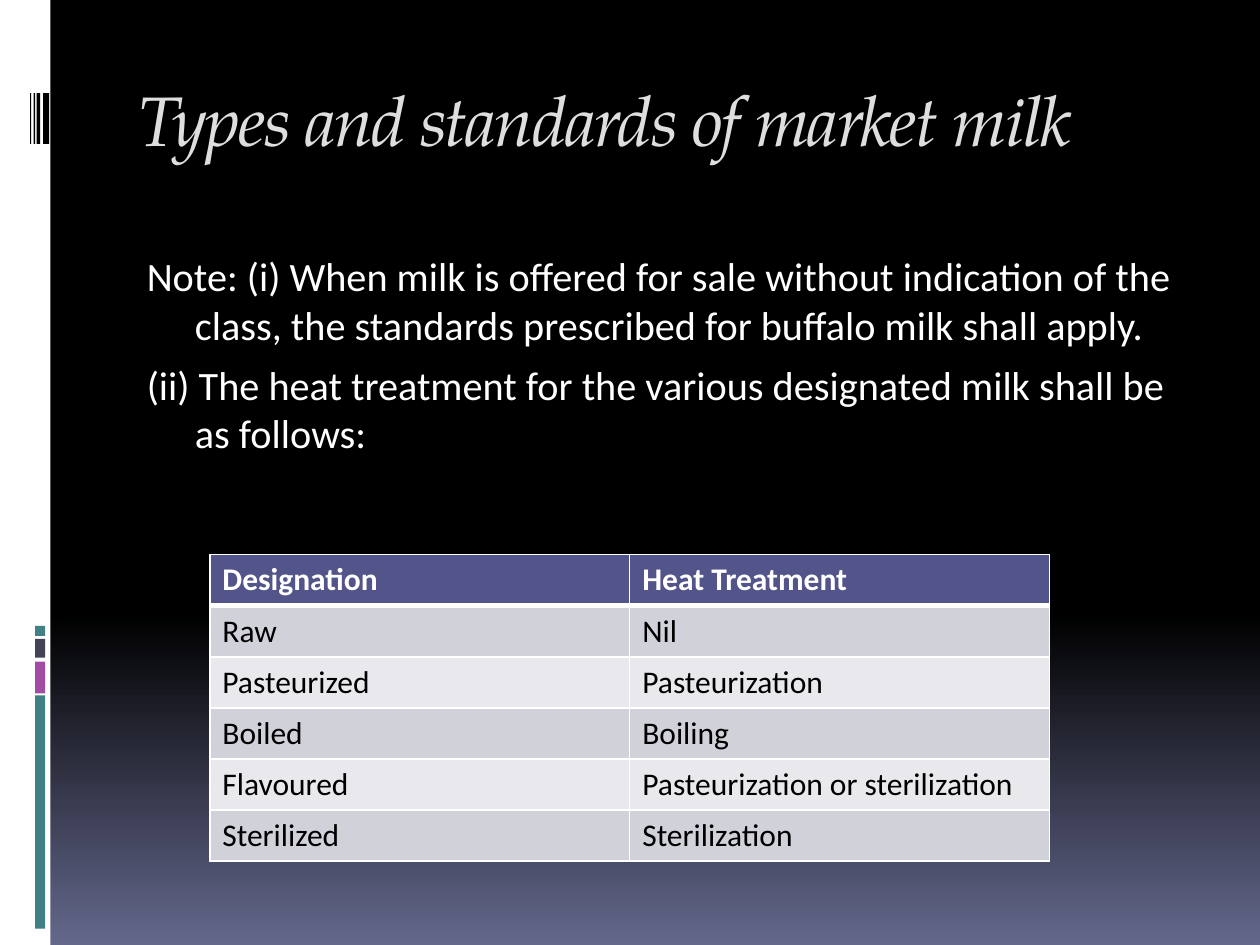
from dataclasses import dataclass

from lxml.etree import SubElement
from pptx import Presentation
from pptx.dml.color import RGBColor
from pptx.enum.shapes import MSO_SHAPE
from pptx.oxml.ns import qn
from pptx.util import Cm, Pt

COLORS = {
    "white": "FFFFFF", "black": "000000", "dusk": "64688B", "title": "DEDEDE",
    "teal": "438086", "purple": "A04DA3", "slate": "424456",
    "header": "53548A", "odd_row": "D1D1DA", "even_row": "E9E9ED",
}
BODY_FONT = "Calibri"
TITLE = "Types and standards of market milk"
NOTES = [
    "Note: (i) When milk is offered for sale without indication of the class, "
    "the standards prescribed for buffalo milk shall apply.",
    "(ii) The heat treatment for the various designated milk shall be as follows:",
]
TREATMENTS = [
    ("Designation", "Heat Treatment"),
    ("Raw", "Nil"),
    ("Pasteurized", "Pasteurization"),
    ("Boiled", "Boiling"),
    ("Flavoured", "Pasteurization or sterilization"),
    ("Sterilized", "Sterilization"),
]


@dataclass(frozen=True)
class Bar:
    """A plain rectangle, measured in centimetres."""
    left: float
    top: float
    width: float
    height: float
    color: str


SIDE_PANEL = Bar(0, 0, 1.02, 19.05, "white")
SEGMENTS = [
    Bar(0.71, top, 0.2, height, color)
    for top, height, color in [
        (14.02, 4.7, "teal"), (13.34, 0.64, "purple"),
        (12.88, 0.38, "slate"), (12.62, 0.2, "teal"),
    ]
]
STRIPES = [
    Bar(left, 1.88, width, 1.02, "black")
    for left, width in [(0.87, 0.12), (0.74, 0.07), (0.68, 0.03), (0.61, 0.02)]
]


def rgb(name: str) -> RGBColor:
    """Look up a palette colour."""
    return RGBColor.from_string(COLORS[name])


def set_font(font, name: str, size: float, color: str) -> None:
    """Set the face, size and colour of a font."""
    font.name, font.size = name, Pt(size)
    font.color.rgb = rgb(color)


def paint_background(s) -> None:
    """Fade the slide from black to dusk at the bottom."""
    fill = s.background.fill
    fill.gradient()
    fill.gradient_angle = 270
    for stop, position, color in zip(fill.gradient_stops, (0.65, 1), ("black", "dusk")):
        stop.position = position
        stop.color.rgb = rgb(color)


def add_bar(s, bar: Bar) -> None:
    """Draw one borderless rectangle."""
    sp = s.shapes.add_shape(MSO_SHAPE.RECTANGLE, Cm(bar.left), Cm(bar.top),
                            Cm(bar.width), Cm(bar.height))
    sp.shadow.inherit = False
    sp.fill.solid()
    sp.fill.fore_color.rgb = rgb(bar.color)
    sp.line.fill.background()


def add_frame(s, top: float, height: float):
    """Add a wrapping text box in the main column."""
    tf = s.shapes.add_textbox(Cm(2.54), Cm(top), Cm(21.59), Cm(height)).text_frame
    tf.word_wrap = True
    return tf


def add_title(s) -> None:
    """Write the italic heading with tightened letters."""
    p = add_frame(s, 1.42, 2.54).paragraphs[0]
    r = p.add_run()
    r.text = TITLE
    set_font(p.font, "TeX Gyre Pagella", 40, "title")
    p.font.italic = True
    r.font._element.set("spc", "-100")


def add_notes(s) -> None:
    """Write the notes with hanging indents."""
    tf = add_frame(s, 4.95, 12.7)
    for i, note in enumerate(NOTES):
        p = tf.add_paragraph() if i else tf.paragraphs[0]
        p.text = note
        if i:
            p.space_before = Pt(7)
        pPr = p._p.get_or_add_pPr()
        pPr.set("marL", str(Cm(1.14)))
        pPr.set("indent", str(Cm(-0.97)))
        set_font(p.font, BODY_FONT, 23, "white")


def add_border(cell, side: str, width: float) -> None:
    """Give one side of a cell a white line."""
    ln = SubElement(cell._tc.get_or_add_tcPr(), qn(f"a:ln{side}"), w=str(Pt(width)))
    fill = SubElement(ln, qn("a:solidFill"))
    SubElement(fill, qn("a:srgbClr"), val=COLORS["white"])


def style_cell(cell, row: int) -> None:
    """Apply borders, fill and font according to the row."""
    header = row == 0
    for side in "LRTB" if header else "LRB":
        add_border(cell, side, 3 if header and side == "B" else 1)
    cell.fill.solid()
    cell.fill.fore_color.rgb = rgb(
        "header" if header else "odd_row" if row % 2 else "even_row")
    font = cell.text_frame.paragraphs[0].font
    set_font(font, BODY_FONT, 18, "white" if header else "black")
    font.bold = header


def add_treatments(s) -> None:
    """Build the heat treatment table."""
    rows, cols = len(TREATMENTS), len(TREATMENTS[0])
    table = s.shapes.add_table(rows, cols, Cm(4.23), Cm(11.18),
                               Cm(16.93), Cm(6.18)).table
    for i, texts in enumerate(TREATMENTS):
        for j, text in enumerate(texts):
            cell = table.cell(i, j)
            cell.text = text
            style_cell(cell, i)


def main() -> None:
    """Build and save the slide."""
    prs = Presentation()
    prs.slide_width, prs.slide_height = Cm(25.4), Cm(19.05)
    s = prs.slides.add_slide(prs.slide_layouts[6])
    paint_background(s)
    for bar in [SIDE_PANEL, *SEGMENTS, *STRIPES]:
        add_bar(s, bar)
    add_title(s)
    add_notes(s)
    add_treatments(s)
    prs.save("out.pptx")


if __name__ == "__main__":
    main()
